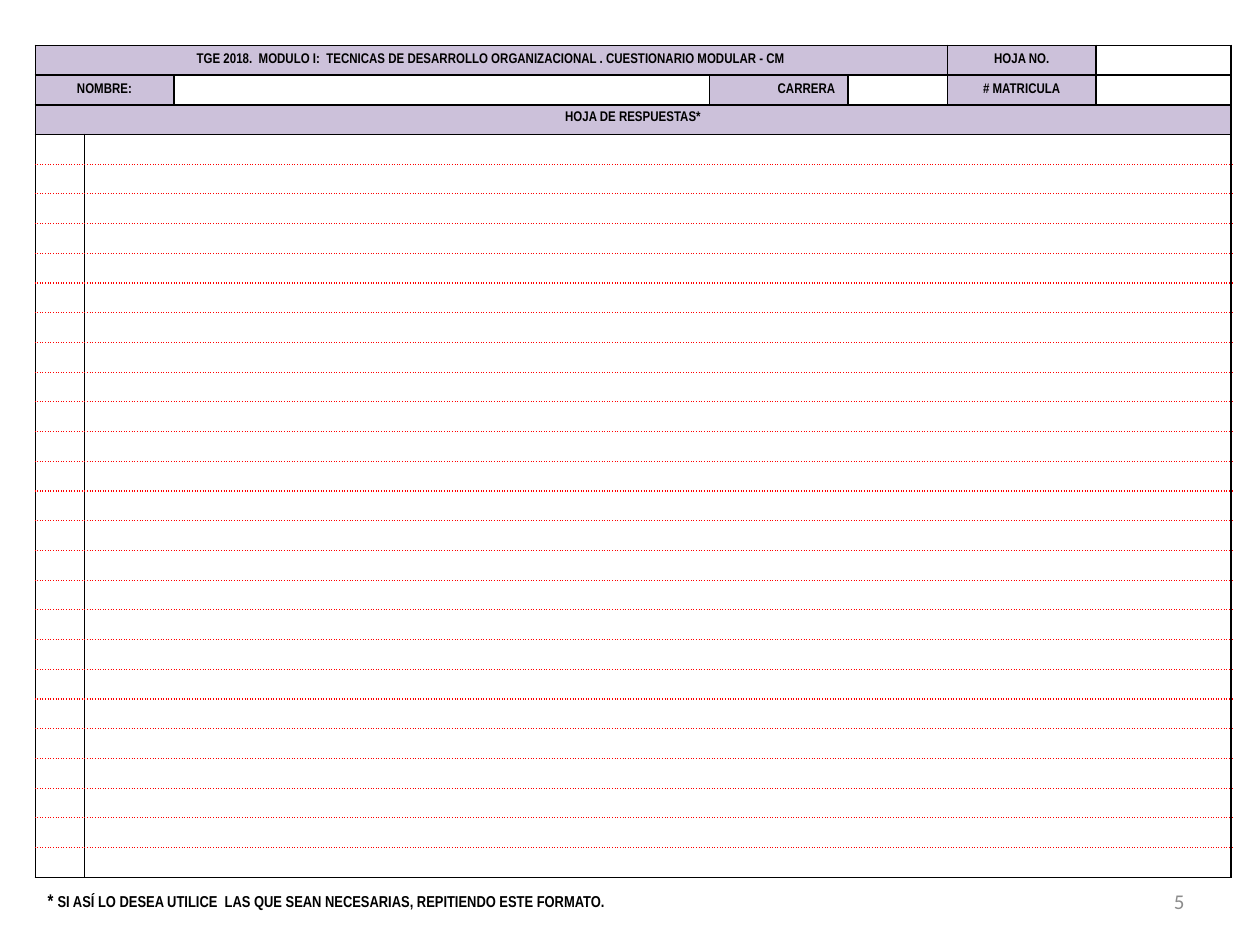
from dataclasses import dataclass

from lxml.etree import SubElement
from pptx import Presentation
from pptx.dml.color import RGBColor
from pptx.enum.text import MSO_ANCHOR as Anchor, PP_ALIGN as Align
from pptx.oxml.ns import qn
from pptx.util import Inches, Pt

BLACK, RED, LILAC, WHITE, GRAY = "000000", "FF0000", "CCC1DA", "FFFFFF", "8C8C8C"
NARROW = "Arial Narrow"
COLUMN_WIDTHS = [0.39, 0.71, 4.25, 1.1, 0.79, 1.18, 1.07]
ROW_COUNT, TABLE_HEIGHT = 28, 6.61
HEADER_ROWS = 3


@dataclass
class HeaderCell:
    row: int
    column: int
    text: str = ""
    span: int = 1
    align: Align = Align.CENTER
    anchor: Anchor = Anchor.MIDDLE
    space_before: float = 3.6


@dataclass
class Border:
    color: str = BLACK
    width: float = 1
    dash: str = "solid"


SOLID = Border()
DOTTED = Border(RED, 0.75, "sysDot")

HEADER = [
    HeaderCell(0, 0, "TGE 2018.  MODULO I:  TECNICAS DE DESARROLLO ORGANIZACIONAL . "
                     "CUESTIONARIO MODULAR - CM", span=5),
    HeaderCell(0, 5, "HOJA NO."),
    HeaderCell(0, 6),
    HeaderCell(1, 0, "NOMBRE:", span=2),
    HeaderCell(1, 2),
    HeaderCell(1, 3, "CARRERA", align=Align.RIGHT),
    HeaderCell(1, 4),
    HeaderCell(1, 5, "# MATRICULA"),
    HeaderCell(1, 6),
    HeaderCell(2, 0, "HOJA DE RESPUESTAS*", span=7, anchor=Anchor.TOP, space_before=0),
]


def color(value: str) -> RGBColor:
    return RGBColor.from_string(value)


def add_text(paragraph, text: str, *, size: float = 8, font: str = NARROW,
             fill: str = BLACK, bold: bool = True, align=None) -> None:
    run = paragraph.add_run()
    run.text = text
    run.font.size, run.font.name, run.font.bold = Pt(size), font, bold
    run.font.color.rgb = color(fill)
    if align is not None:
        paragraph.alignment = align


def add_text_box(slide, left: float, top: float, width: float, height: float,
                 anchor=Anchor.TOP):
    box = slide.shapes.add_textbox(Inches(left), Inches(top), Inches(width), Inches(height))
    box.text_frame.word_wrap = True
    box.text_frame.vertical_anchor = anchor
    return box.text_frame.paragraphs[0]


def set_borders(cell, top: Border, bottom: Border) -> None:
    properties = cell._tc.get_or_add_tcPr()
    sides = {"a:lnL": SOLID, "a:lnR": SOLID, "a:lnT": top, "a:lnB": bottom}
    for tag, border in sides.items():
        line = SubElement(properties, qn(tag), w=str(Pt(border.width)))
        fill = SubElement(line, qn("a:solidFill"))
        SubElement(fill, qn("a:srgbClr"), val=border.color)
        SubElement(line, qn("a:prstDash"), val=border.dash)


def set_empty_size(cell, size: float) -> None:
    """Keep an empty cell from growing its row."""
    paragraph = cell.text_frame.paragraphs[0]._p
    SubElement(paragraph, qn("a:endParaRPr"), sz=str(int(size * 100)))


def fill_header(table, item: HeaderCell) -> None:
    cell = table.cell(item.row, item.column)
    if item.span > 1:
        cell.merge(table.cell(item.row, item.column + item.span - 1))
    cell.vertical_anchor = item.anchor
    cell.fill.solid()
    cell.fill.fore_color.rgb = color(LILAC if item.text else WHITE)
    if item.text:
        paragraph = cell.text_frame.paragraphs[0]
        paragraph.space_before = Pt(item.space_before)
        add_text(paragraph, item.text, align=item.align)


def add_answer_sheet(slide) -> None:
    table = slide.shapes.add_table(
        ROW_COUNT, len(COLUMN_WIDTHS), Inches(0.28), Inches(0.36),
        Inches(sum(COLUMN_WIDTHS)), Inches(TABLE_HEIGHT)).table
    table.first_row = table.horz_banding = False
    for column, width in zip(table.columns, COLUMN_WIDTHS):
        column.width = Inches(width)

    # Grid: solid header, dotted writing lines
    for index, row in enumerate(table.rows):
        row.height = Inches(TABLE_HEIGHT / ROW_COUNT)
        top = SOLID if index <= HEADER_ROWS else DOTTED
        bottom = SOLID if index < HEADER_ROWS or index == ROW_COUNT - 1 else DOTTED
        for cell in row.cells:
            set_borders(cell, top, bottom)
            cell.fill.background()
            vertical = 0.05 if index == HEADER_ROWS - 1 else 0
            cell.margin_top = cell.margin_bottom = Inches(vertical)
            cell.margin_left = cell.margin_right = Inches(0.1)

    # Header labels and blanks
    for item in HEADER:
        fill_header(table, item)

    # Answer lines
    for index in range(HEADER_ROWS, ROW_COUNT):
        table.cell(index, 1).merge(table.cell(index, len(COLUMN_WIDTHS) - 1))
    for row in table.rows:
        for cell in row.cells:
            if not cell.text_frame.text:
                set_empty_size(cell, 8)


def main() -> None:
    presentation = Presentation()
    presentation.slide_width, presentation.slide_height = Inches(10), Inches(7.5)
    slide = presentation.slides.add_slide(presentation.slide_layouts[6])

    # Page number
    number = add_text_box(slide, 7.17, 6.95, 2.33, 0.4, Anchor.MIDDLE)
    add_text(number, "5", size=12, font="Calibri", fill=GRAY, bold=False, align=Align.RIGHT)

    add_answer_sheet(slide)

    # Footnote
    note = add_text_box(slide, 0.28, 7.01, 9.29, 0.29)
    add_text(note, "* ", size=10.5)
    add_text(note, "SI ASÍ LO DESEA UTILICE  LAS QUE SEAN NECESARIAS, REPITIENDO ESTE FORMATO.",
             size=9)

    presentation.save("out.pptx")


if __name__ == "__main__":
    main()
